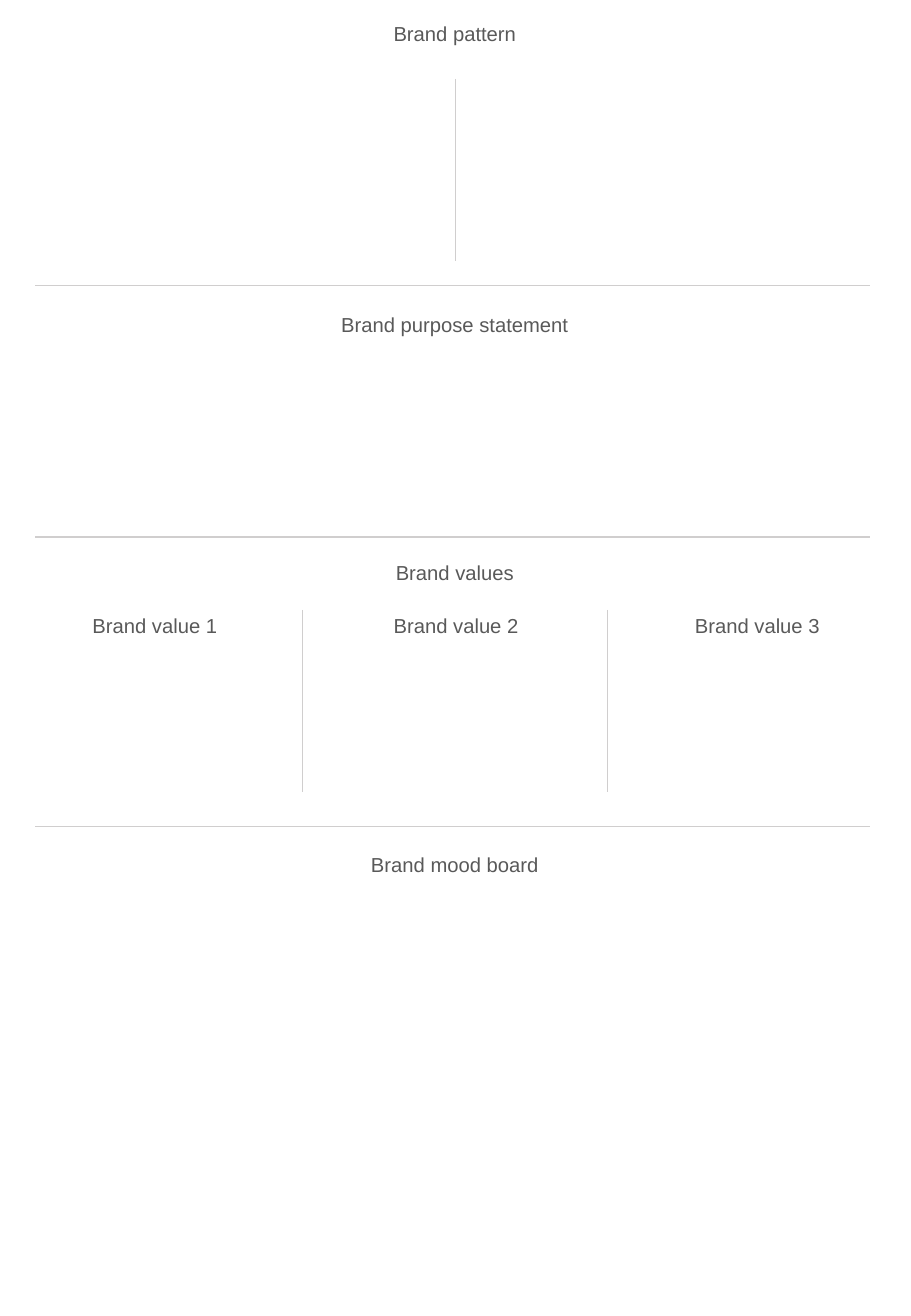
from lxml.etree import SubElement
from pptx import Presentation
from pptx.dml.color import RGBColor
from pptx.enum.shapes import MSO_CONNECTOR
from pptx.enum.text import MSO_ANCHOR, MSO_AUTO_SIZE, PP_ALIGN
from pptx.oxml.ns import qn
from pptx.util import Emu, Pt

PX = 9144
COLOURS = {"text": "595959", "rule": "D0CECE"}
PAGE_WIDTH, PAGE_HEIGHT = 750, 1083
MARGIN_LEFT, MARGIN_RIGHT = 29, 716
HEADING_LEFT, HEADING_WIDTH, HEADING_HEIGHT = 146, 457, 19
DIVIDER_HEIGHT = 150
VALUE_WIDTH, VALUE_HEIGHT, VALUE_STEP = 215, 152, 248


def px(length):
    """Turn a length in px into EMU."""
    return Emu(length * PX)


def add_line(page, start, end):
    """Draw a thin grey line between two points."""
    line = page.shapes.add_connector(
        MSO_CONNECTOR.STRAIGHT, *map(px, start), *map(px, end))
    line.line.color.rgb = RGBColor.from_string(COLOURS["rule"])
    line.line.width = Pt(0.75)
    SubElement(line._element.spPr, qn("a:effectLst"))


def add_text(page, text, left, top, width, height, box=None):
    """Place centred text in the given box or in a new text box."""
    box = box or page.shapes.add_textbox(0, 0, 0, 0)
    box.left, box.top, box.width, box.height = map(px, (left, top, width, height))
    frame = box.text_frame
    frame.text = text
    frame.word_wrap = True
    frame.auto_size = MSO_AUTO_SIZE.NONE
    frame.vertical_anchor = MSO_ANCHOR.TOP
    frame.margin_left = frame.margin_right = px(10)
    frame.margin_top = frame.margin_bottom = px(5)
    para = frame.paragraphs[0]
    para.alignment = PP_ALIGN.CENTER
    para.line_spacing = 0.9
    para.space_before = Pt(0)
    font = para.runs[0].font
    font.name, font.size = "Arial", Pt(12)
    font.color.rgb = RGBColor.from_string(COLOURS["text"])


def add_heading(page, text, top, box=None):
    """Place a section heading across the middle of the page."""
    add_text(page, text, HEADING_LEFT, top, HEADING_WIDTH, HEADING_HEIGHT, box)


def add_section(page, text, top, gap):
    """Open a section with a full-width line and a heading below it."""
    add_line(page, (MARGIN_LEFT, top), (MARGIN_RIGHT, top))
    add_heading(page, text, top + gap)


def add_divider(page, left, top):
    """Draw a vertical line between two columns."""
    add_line(page, (left, top), (left, top + DIVIDER_HEIGHT))


def add_pattern(page, top):
    """Build the pattern region, with the page title over two halves."""
    add_heading(page, "Brand pattern", top + 15, page.shapes.title)
    add_divider(page, PAGE_WIDTH // 2, top + 65)


def add_values(page, top):
    """Build the values region with three columns."""
    add_section(page, "Brand values", top, 16)
    columns_top = top + 60
    for index in range(3):
        add_text(page, f"Brand value {index + 1}", 20 + index * VALUE_STEP,
                 columns_top, VALUE_WIDTH, VALUE_HEIGHT)
    for left in (249, 500):
        add_divider(page, left, columns_top)


def main():
    """Build the brand page and save it."""
    deck = Presentation()
    deck.slide_width, deck.slide_height = px(PAGE_WIDTH), px(PAGE_HEIGHT)
    page = deck.slides.add_slide(deck.slide_layouts.get_by_name("Title Only"))
    add_pattern(page, 0)
    add_section(page, "Brand purpose statement", 235, 19)
    add_values(page, 442)
    add_section(page, "Brand mood board", 680, 19)
    deck.save("out.pptx")


if __name__ == "__main__":
    main()
